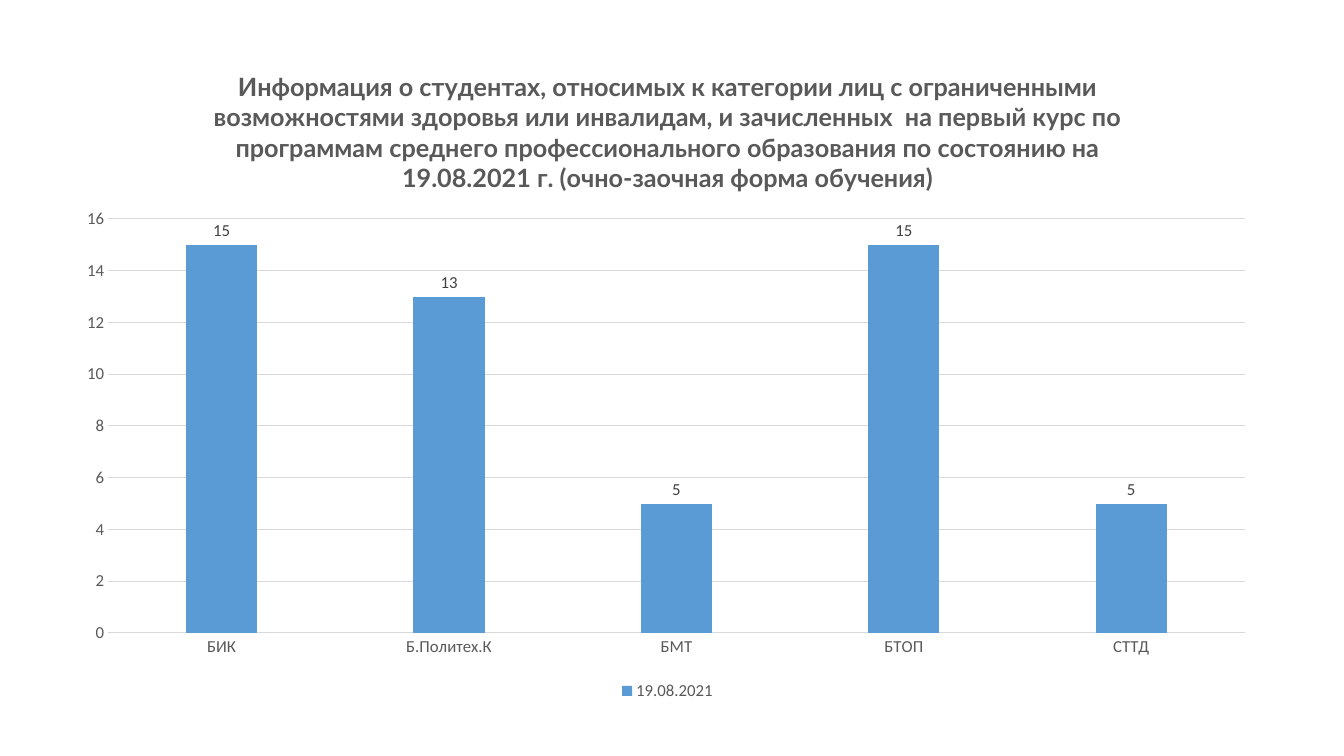
from lxml import etree
from pptx import Presentation
from pptx import util as u
from pptx.chart import data as chart_data
from pptx.dml import color
from pptx.enum import chart as kinds
from pptx.oxml import ns

EMU_PER_PX = 914400 / 100.8
COLOURS = {"bar": "5B9BD5", "text": "595959", "label": "404040", "grid": "D9D9D9"}

TITLE = (
    "Информация о студентах, относимых к категории лиц с ограниченными "
    "возможностями здоровья или инвалидам, и зачисленных  на первый курс по "
    "программам среднего профессионального образования по состоянию на "
    "19.08.2021 г. (очно-заочная форма обучения)"
)
STUDENTS = {"БИК": 15, "Б.Политех.К": 13, "БМТ": 5, "БТОП": 15, "СТТД": 5}

# Left, top, width, height in px
CHART_BOX = (64, 45, 1207, 660)
PLOT_BOX = (108, 219, 1137, 414)


def px(length):
    return u.Emu(round(length * EMU_PER_PX))


def rgb(name):
    return color.RGBColor.from_string(COLOURS[name])


def style_font(font, colour="text", size=12, name="Calibri", bold=False):
    font.name = name
    font.size = u.Pt(size)
    font.bold = bold
    font.color.rgb = rgb(colour)


def style_line(line, colour="grid"):
    line.color.rgb = rgb(colour)
    line.width = u.Pt(0.75)


def add_column_chart(page):
    data = chart_data.CategoryChartData()
    data.categories = list(STUDENTS)
    data.add_series("19.08.2021", list(STUDENTS.values()))
    frame = page.shapes.add_chart(
        kinds.XL_CHART_TYPE.COLUMN_CLUSTERED, *map(px, CHART_BOX), data)
    frame.chart.font.name = "Calibri"
    frame.chart.font.size = u.Pt(10)
    return frame.chart


def set_title(chart):
    chart.has_title = True
    chart.chart_title.include_in_layout = False
    para = chart.chart_title.text_frame.paragraphs[0]
    para.text = TITLE
    style_font(para.runs[0].font, size=18, name="Lato", bold=True)


def style_axes(chart):
    for axis in (chart.category_axis, chart.value_axis):
        axis.major_tick_mark = axis.minor_tick_mark = kinds.XL_TICK_MARK.NONE
        style_font(axis.tick_labels.font)
    style_line(chart.category_axis.format.line)

    scale = chart.value_axis
    scale.minimum_scale, scale.maximum_scale, scale.major_unit = 0, 16, 2
    scale.format.line.fill.background()
    scale.has_major_gridlines = True
    style_line(scale.major_gridlines.format.line)


def style_columns(chart):
    plot = chart.plots[0]
    plot.gap_width = 219
    plot.overlap = -27
    plot.vary_by_categories = False

    series = plot.series[0]
    series.format.fill.solid()
    series.format.fill.fore_color.rgb = rgb("bar")
    series.format.line.fill.background()

    labels = series.data_labels
    labels.show_value = True
    labels.position = kinds.XL_LABEL_POSITION.OUTSIDE_END
    style_font(labels.font, "label")


def set_legend(chart):
    chart.has_legend = True
    chart.legend.position = kinds.XL_LEGEND_POSITION.BOTTOM
    chart.legend.include_in_layout = False
    style_font(chart.legend.font)


def place_plot(chart):
    """Fix the inner plot area as fractions of the chart frame."""
    left, top, width, height = CHART_BOX
    x, y, w, h = PLOT_BOX
    settings = {
        "layoutTarget": "inner", "xMode": "edge", "yMode": "edge",
        "x": (x - left) / width, "y": (y - top) / height,
        "w": w / width, "h": h / height,
    }
    area = chart.element.find(".//" + ns.qn("c:plotArea"))
    for old in area.findall(ns.qn("c:layout")):
        area.remove(old)
    layout = etree.Element(ns.qn("c:layout"))
    manual = etree.SubElement(layout, ns.qn("c:manualLayout"))
    for tag, value in settings.items():
        etree.SubElement(manual, ns.qn("c:" + tag)).set("val", str(value))
    area.insert(0, layout)


def main():
    deck = Presentation()
    deck.slide_width, deck.slide_height = px(1344), px(756)
    page = deck.slides.add_slide(deck.slide_layouts[6])

    # Chart with its title, axes, columns and legend
    chart = add_column_chart(page)
    set_title(chart)
    style_axes(chart)
    style_columns(chart)
    set_legend(chart)
    place_plot(chart)

    deck.save("out.pptx")


if __name__ == "__main__":
    main()
